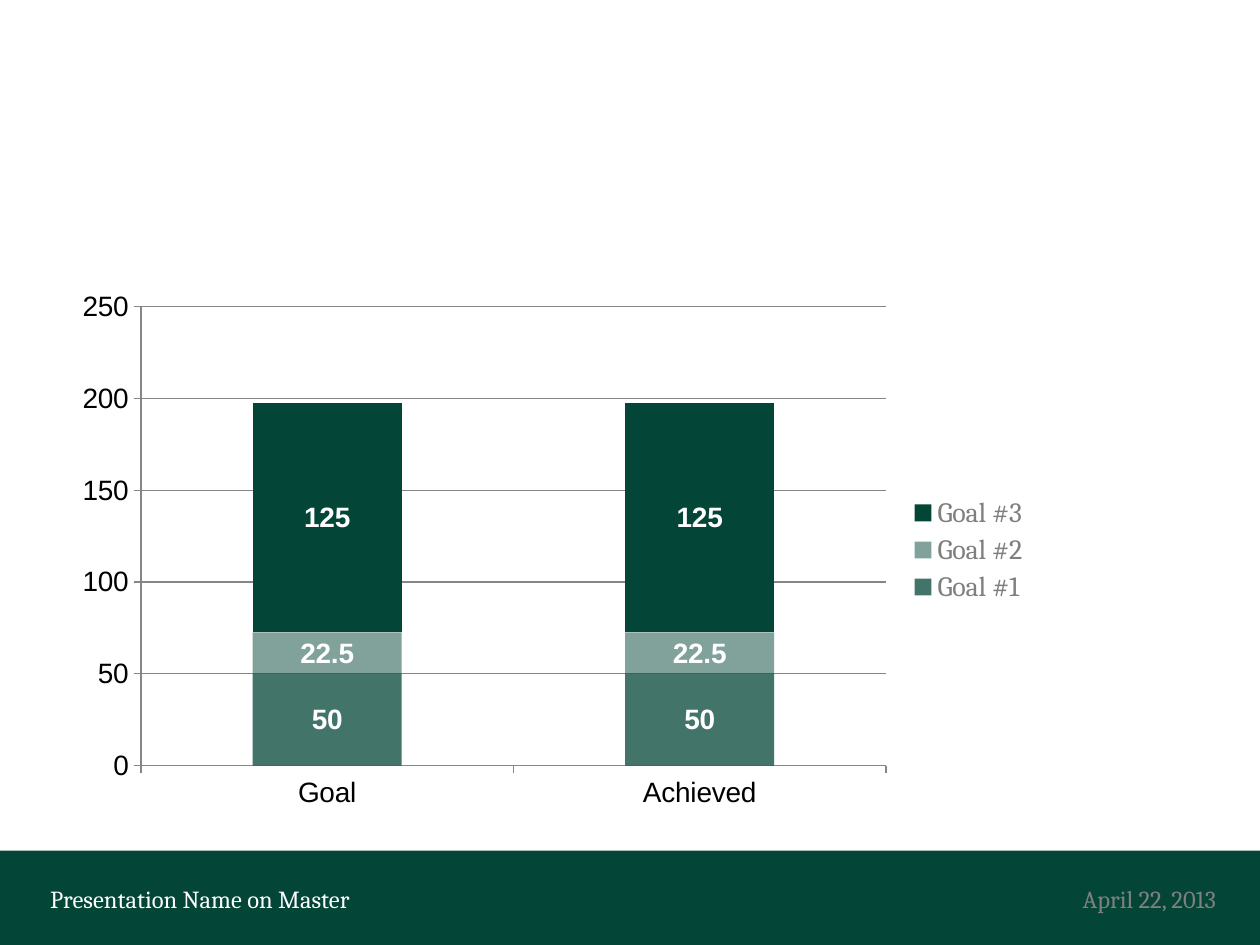
from dataclasses import dataclass

from lxml.etree import SubElement
from pptx import Presentation
from pptx.chart.data import CategoryChartData
from pptx.dml.color import RGBColor
from pptx.enum.chart import XL_CHART_TYPE, XL_LEGEND_POSITION, XL_TICK_MARK
from pptx.enum.shapes import MSO_SHAPE
from pptx.enum.text import MSO_ANCHOR, PP_ALIGN
from pptx.oxml.ns import qn
from pptx.util import Inches, Pt


@dataclass(frozen=True)
class Theme:
    green: RGBColor = RGBColor(0x03, 0x46, 0x38)
    white: RGBColor = RGBColor(0xFF, 0xFF, 0xFF)
    black: RGBColor = RGBColor(0, 0, 0)
    footer_gray: RGBColor = RGBColor(0x80, 0x80, 0x80)
    legend_gray: RGBColor = RGBColor(0x7F, 0x7F, 0x7F)
    line_gray: RGBColor = RGBColor(0x86, 0x86, 0x86)
    serif: str = "Cambria"
    sans: str = "Arial"
    base: str = "Calibri"
    base_size: Pt = Pt(18)
    chart_size: Pt = Pt(16)
    footer_size: Pt = Pt(14)


THEME = Theme()
CATEGORIES = ["Goal", "Achieved"]
GOALS = [
    ("Goal #1", [50, 50], 75),
    ("Goal #2", [22.5, 22.5], 50),
    ("Goal #3", [125, 125], 100),
]


def style_font(font, name, size, color, bold=False):
    font.name = name
    font.size = size
    font.bold = bold
    font.color.rgb = color


def style_line(line):
    line.color.rgb = THEME.line_gray
    line.width = Pt(0.75)


def fill_series(series, opacity):
    fill = series.format.fill
    fill.solid()
    fill.fore_color.rgb = THEME.green
    if opacity < 100:
        color = series.format.fill._xPr.find(f"{qn('a:solidFill')}/{qn('a:srgbClr')}")
        SubElement(color, qn("a:alpha"), val=str(opacity * 1000))


def add_goal_chart(slide, left, top, width, height):
    data = CategoryChartData()
    data.categories = CATEGORIES
    for name, values, _ in GOALS:
        data.add_series(name, values)
    chart = slide.shapes.add_chart(
        XL_CHART_TYPE.COLUMN_STACKED, left, top, width, height, data
    ).chart
    chart.has_title = False
    style_font(chart.font, THEME.base, THEME.base_size, THEME.black)

    for axis in (chart.category_axis, chart.value_axis):
        axis.major_tick_mark = XL_TICK_MARK.OUTSIDE
        style_font(axis.tick_labels.font, THEME.sans, THEME.chart_size, THEME.black)
        style_line(axis.format.line)
    chart.value_axis.has_major_gridlines = True
    style_line(chart.value_axis.major_gridlines.format.line)

    chart.has_legend = True
    chart.legend.position = XL_LEGEND_POSITION.RIGHT
    chart.legend.include_in_layout = False
    style_font(chart.legend.font, THEME.serif, THEME.chart_size, THEME.legend_gray)

    plot = chart.plots[0]
    plot.vary_by_categories = False
    plot.overlap = 100
    plot.gap_width = 150
    for series, (_, _, opacity) in zip(plot.series, GOALS):
        fill_series(series, opacity)
        labels = series.data_labels
        labels.show_value = True
        style_font(labels.font, THEME.sans, THEME.chart_size, THEME.white, bold=True)


def add_footer_text(slide, text, left, top, width, height, color, alignment):
    frame = slide.shapes.add_textbox(left, top, width, height).text_frame
    frame.word_wrap = True
    frame.vertical_anchor = MSO_ANCHOR.MIDDLE
    paragraph = frame.paragraphs[0]
    paragraph.text = text
    paragraph.alignment = alignment
    style_font(paragraph.font, THEME.serif, THEME.footer_size, color)


def add_footer(slide, left, top, width, height):
    band = slide.shapes.add_shape(MSO_SHAPE.RECTANGLE, left, top, width, height)
    band.shadow.inherit = False
    band.fill.solid()
    band.fill.fore_color.rgb = THEME.green
    band.line.fill.background()

    text_height = Inches(0.4)
    text_top = top + Inches(0.18)
    date_width = Inches(2.33)
    add_footer_text(
        slide, "Presentation Name on Master", left + Inches(0.3), text_top,
        Inches(3.17), text_height, THEME.white, PP_ALIGN.LEFT,
    )
    add_footer_text(
        slide, "April 22, 2013", left + width - date_width - Inches(0.25), text_top,
        date_width, text_height, THEME.footer_gray, PP_ALIGN.RIGHT,
    )


def main():
    presentation = Presentation()
    presentation.slide_width = Inches(10)
    presentation.slide_height = Inches(7.5)
    slide = presentation.slides.add_slide(presentation.slide_layouts[6])
    add_footer(slide, 0, Inches(6.75), presentation.slide_width, Inches(0.75))
    add_goal_chart(slide, Inches(0.5), Inches(2.23), Inches(7.77), Inches(4.27))
    presentation.save("out.pptx")


if __name__ == "__main__":
    main()
